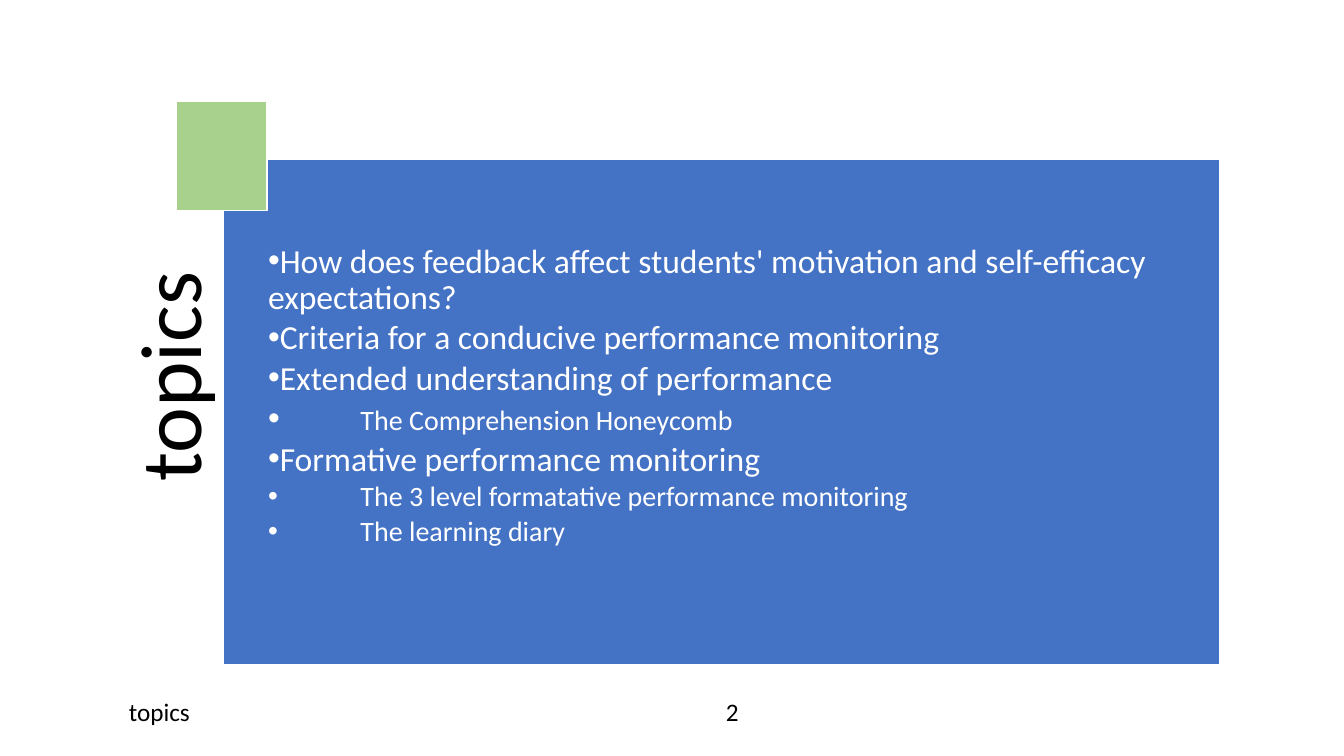
from lxml.etree import SubElement as Sub
from pptx import Presentation
from pptx.dml.color import RGBColor
from pptx.enum.shapes import MSO_SHAPE as Shape
from pptx.enum.text import MSO_ANCHOR as Anchor, MSO_AUTO_SIZE as Auto, PP_ALIGN as Align
from pptx.oxml.ns import qn
from pptx.util import Pt

FACE = "Calibri"
BLACK, WHITE, BLUE, GREEN = "000000", "FFFFFF", "4472C4", "A9D18E"
TOPICS = [  # text, size, size of the leading tab
    ("How does feedback affect students' motivation and self-efficacy expectations?", 24, None),
    ("Criteria for a conducive performance monitoring", 24, None),
    ("Extended understanding of performance", 24, None),
    ("The Comprehension Honeycomb", 20, 24),
    ("Formative performance monitoring", 24, None),
    ("The 3 level formatative performance monitoring", 20, 20),
    ("The learning diary", 20, 20),
]


def color(code):
    return RGBColor.from_string(code)


def place(item, left, top, width, height):
    item.left, item.top, item.width, item.height = map(Pt, (left, top, width, height))


def paint(item, code):
    item.fill.solid()
    item.fill.fore_color.rgb = color(code)
    item.line.color.rgb = color(WHITE)
    item.line.width = Pt(1)


def style(font, size, code):
    font.name, font.size = FACE, Pt(size)
    font.color.rgb = color(code)


def frame(item, left, top, right, bottom):
    box = item.text_frame
    box.word_wrap, box.auto_size = True, Auto.NONE
    box.vertical_anchor = Anchor.TOP
    box.margin_left, box.margin_top = Pt(left), Pt(top)
    box.margin_right, box.margin_bottom = Pt(right), Pt(bottom)
    return box


def heading(title, text):
    place(title, -36.7, 260.6, 322.6, 68.4)
    title.rotation = 270
    para = frame(title, 0, 0, 60.5, 0).paragraphs[0]
    para.text = text
    para.alignment, para.line_spacing = Align.RIGHT, 0.9
    style(para.font, 62, BLACK)


def bullet(para):
    props = para._p.get_or_add_pPr()
    props.set("marL", str(Pt(18)))
    props.set("indent", "0")
    Sub(props, qn("a:buChar"), char="•")
    tabs = Sub(props, qn("a:tabLst"))
    Sub(tabs, qn("a:tab"), pos=str(Pt(84)), algn="l")


def listing(body, topics):
    place(body, 159.8, 113.8, 711.4, 360.7)
    paint(body, BLUE)
    box = frame(body, 13.7, 60.5, 13.7, 13.7)
    for i, (text, size, tab) in enumerate(topics):
        para = box.add_paragraph() if i else box.paragraphs[0]
        para.level = 1
        bullet(para)
        para.line_spacing = 0.9
        para.space_before, para.space_after = Pt(0), Pt(3)
        style(para.font, size, WHITE)
        if tab:
            lead = para.add_run()
            lead.text = "\t"
            style(lead.font, tab, WHITE)
        run = para.add_run()
        run.text = text
        style(run.font, size, WHITE)


def accent(slide):
    square = slide.shapes.add_shape(Shape.RECTANGLE, Pt(126), Pt(72.7), Pt(64.8), Pt(77.8))
    square.shadow.inherit = False
    paint(square, GREEN)


def label(slide, text, left, width, align):
    item = slide.shapes.add_textbox(Pt(left), Pt(494), Pt(width), Pt(29))
    para = frame(item, 7.2, 3.6, 7.2, 3.6).paragraphs[0]
    para.text, para.alignment = text, align
    style(para.font, 18, BLACK)


def main():
    deck = Presentation()
    deck.slide_width, deck.slide_height = Pt(960), Pt(540)
    slide = deck.slides.add_slide(deck.slide_layouts[1])

    # Sideways title and topic panel
    heading(slide.shapes.title, "topics")
    listing(slide.placeholders[1], TOPICS)
    accent(slide)

    # Footer
    label(slide, "topics", 85, 324, Align.LEFT)
    label(slide, "2", 415, 216, Align.CENTER)
    deck.save("out.pptx")


if __name__ == "__main__":
    main()
